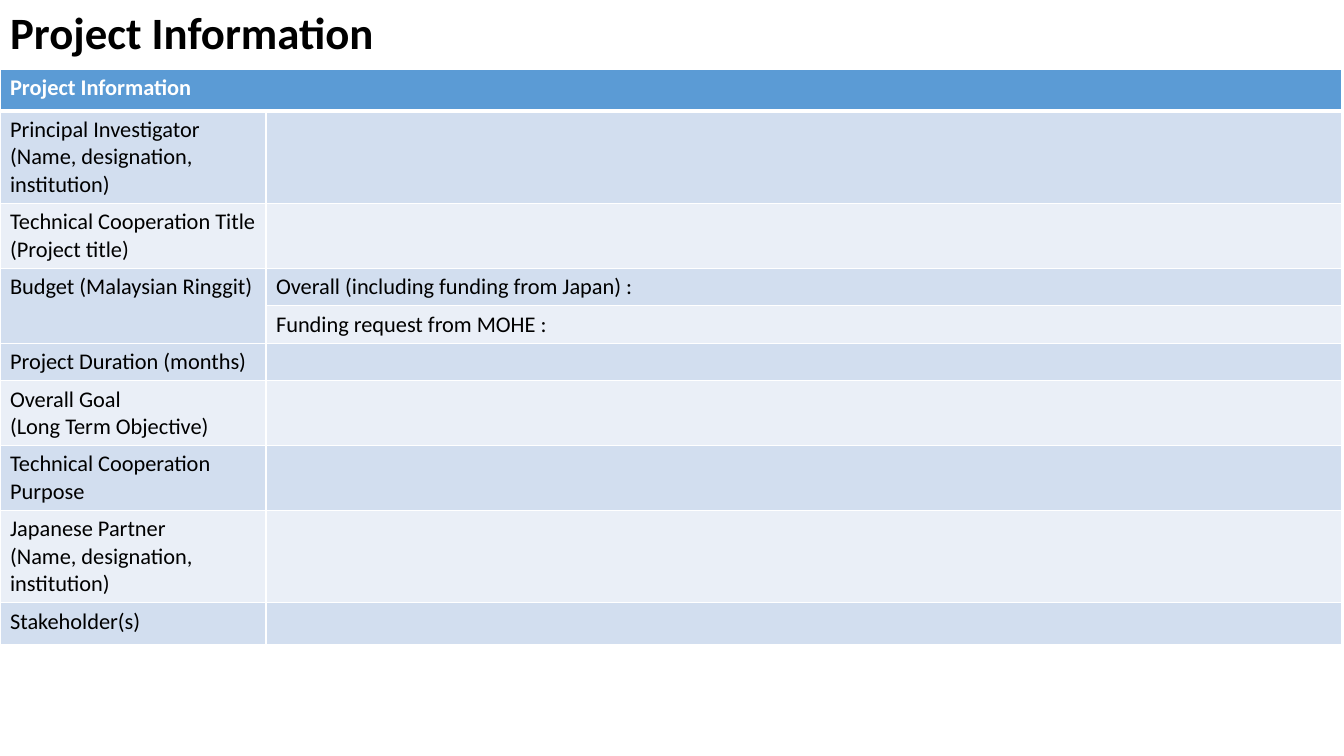
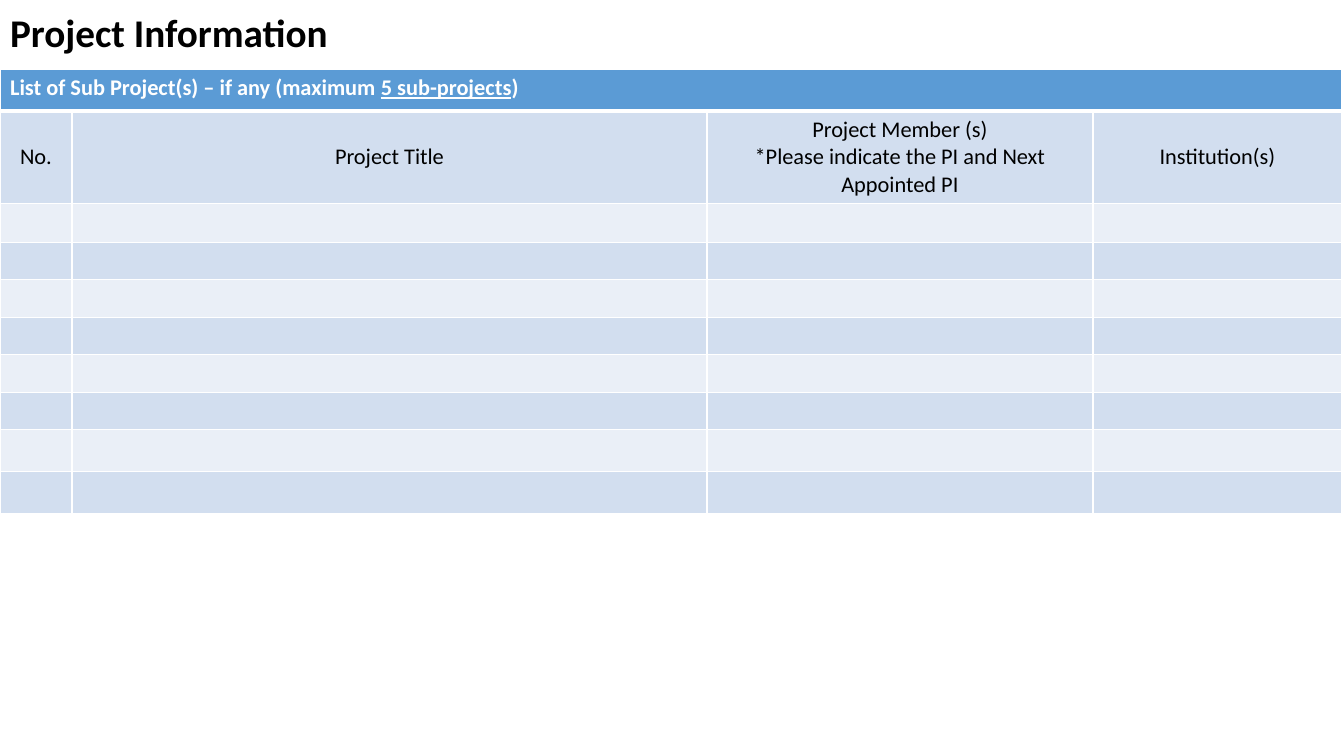
from dataclasses import dataclass

from lxml import etree
from pptx import Presentation
from pptx.dml.color import RGBColor
from pptx.enum.text import MSO_ANCHOR as Anchor, MSO_AUTO_SIZE as AutoSize, PP_ALIGN as Align
from pptx.oxml.ns import qn
from pptx.util import Emu, Pt

SLIDE_W, SLIDE_H = 1344, 756
TITLE_BOX = (0, 0, 951, 69)
TABLE_LEFT, TABLE_TOP = 0, 69
HEADER_H = 42
LINE_H, CELL_PAD = 27, 10


@dataclass(frozen=True)
class Theme:
    font: str = "Calibri"
    ink: str = "000000"
    white: str = "FFFFFF"
    header: str = "5B9BD5"
    stripes: tuple = ("EAEFF7", "D2DEEF")
    cell_size: int = 16
    rule: int = 1
    header_rule: int = 3


THEME = Theme()


def px(length):
    return Emu(round(length * 914400 / 100.8))


def row_height(lines):
    return lines * LINE_H + CELL_PAD


def write(frame, text, size=THEME.cell_size, color=THEME.ink, bold=False,
          align=Align.LEFT, spacing=None, underlined=""):
    """Write one paragraph per line; the underlined phrase gets its own run."""
    for index, line in enumerate(text.split("\n")):
        paragraph = frame.paragraphs[0] if index == 0 else frame.add_paragraph()
        paragraph.alignment = align
        if spacing:
            paragraph.line_spacing = spacing
        if not line:
            etree.SubElement(paragraph._p, qn("a:endParaRPr"), sz=str(size * 100))
            continue
        before, phrase, after = line.partition(underlined) if underlined else (line, "", "")
        for part in filter(None, (before, phrase, after)):
            run = paragraph.add_run()
            run.text = part
            font = run.font
            font.name, font.size, font.bold = THEME.font, Pt(size), bold
            font.color.rgb = RGBColor.from_string(color)
            if phrase and part == phrase:
                font.underline = True


def set_borders(cell, top, bottom):
    """Draw white rules; they must precede the fill in the cell properties."""
    properties = cell._tc.get_or_add_tcPr()
    widths = {"L": THEME.rule, "R": THEME.rule, "T": top, "B": bottom}
    for index, (side, width) in enumerate(widths.items()):
        line = etree.Element(qn(f"a:ln{side}"), w=str(Pt(width)))
        fill = etree.SubElement(line, qn("a:solidFill"))
        etree.SubElement(fill, qn("a:srgbClr"), val=THEME.white)
        properties.insert(index, line)


def add_title(slide, text, size):
    title = slide.shapes.title
    title.left, title.top, title.width, title.height = map(px, TITLE_BOX)
    frame = title.text_frame
    frame.auto_size = AutoSize.NONE
    frame.word_wrap = True
    frame.vertical_anchor = Anchor.MIDDLE
    write(frame, text, size=size, bold=True, spacing=0.9)


def add_striped_table(slide, left, top, widths, heights):
    """Place an empty table with a coloured header row and striped body."""
    table = slide.shapes.add_table(len(heights), len(widths), px(left), px(top),
                                   px(sum(widths)), px(sum(heights))).table
    table.first_row = table.horz_banding = False
    for column, width in zip(table.columns, widths):
        column.width = px(width)
    for index, (row, height) in enumerate(zip(table.rows, heights)):
        row.height = px(height)
        for cell in row.cells:
            cell.fill.solid()
            fill = THEME.stripes[index % 2] if index else THEME.header
            cell.fill.fore_color.rgb = RGBColor.from_string(fill)
            set_borders(cell, THEME.header_rule if index == 1 else THEME.rule,
                        THEME.rule if index else THEME.header_rule)
    table.cell(0, 0).merge(table.cell(0, len(widths) - 1))
    return table


def add_header(table, text, **text_format):
    write(table.cell(0, 0).text_frame, text, color=THEME.white, bold=True, **text_format)


def fill_body(table, records, align=Align.LEFT, anchor=Anchor.TOP):
    for row, record in enumerate(records, start=1):
        for column, text in enumerate(record):
            cell = table.cell(row, column)
            cell.vertical_anchor = anchor
            write(cell.text_frame, text, align=align)


def build_project_details(slide):
    add_title(slide, "Project Information", 32)
    # Label, answer and number of text lines in the row
    details = [
        ("Principal Investigator\n(Name, designation, institution)", "", 3),
        ("Technical Cooperation Title\n(Project title)", "", 2),
        ("Budget (Malaysian Ringgit)", "Overall (including funding from Japan) :", 1),
        ("", "Funding request from MOHE :", 1),
        ("Project Duration (months)", "", 1),
        ("Overall Goal\n(Long Term Objective)", "", 2),
        ("Technical Cooperation Purpose", "", 2),
        ("Japanese Partner\n(Name, designation, institution)", "", 3),
        ("Stakeholder(s)", "", 1),
    ]
    body = [row_height(lines) for *_, lines in details]
    body[-1] = HEADER_H
    table = add_striped_table(slide, TABLE_LEFT, TABLE_TOP, (266, 1076), [HEADER_H, *body])
    add_header(table, "Project Information")
    fill_body(table, [(label, answer) for label, answer, _ in details])
    table.cell(3, 0).merge(table.cell(4, 0))


def build_sub_projects(slide):
    add_title(slide, "Project Information", 28)
    headings = ("No.", "Project Title",
                "Project Member (s)\n*Please indicate the PI and Next Appointed PI",
                "Institution(s)")
    blank_rows = [39] + [row_height(1)] * 5 + [HEADER_H] * 2
    table = add_striped_table(slide, TABLE_LEFT, TABLE_TOP, (72, 635, 386, 249),
                              [HEADER_H, row_height(3), *blank_rows])
    add_header(table, "List of Sub Project(s) – if any (maximum 5 sub-projects)",
               underlined="5 sub-projects")
    blanks = [("",) * len(headings)] * len(blank_rows)
    fill_body(table, [headings, *blanks], align=Align.CENTER, anchor=Anchor.MIDDLE)


def main():
    deck = Presentation()
    deck.slide_width, deck.slide_height = px(SLIDE_W), px(SLIDE_H)
    title_only = deck.slide_layouts[5]
    for build in (build_project_details, build_sub_projects):
        build(deck.slides.add_slide(title_only))
    deck.save("out.pptx")


if __name__ == "__main__":
    main()
